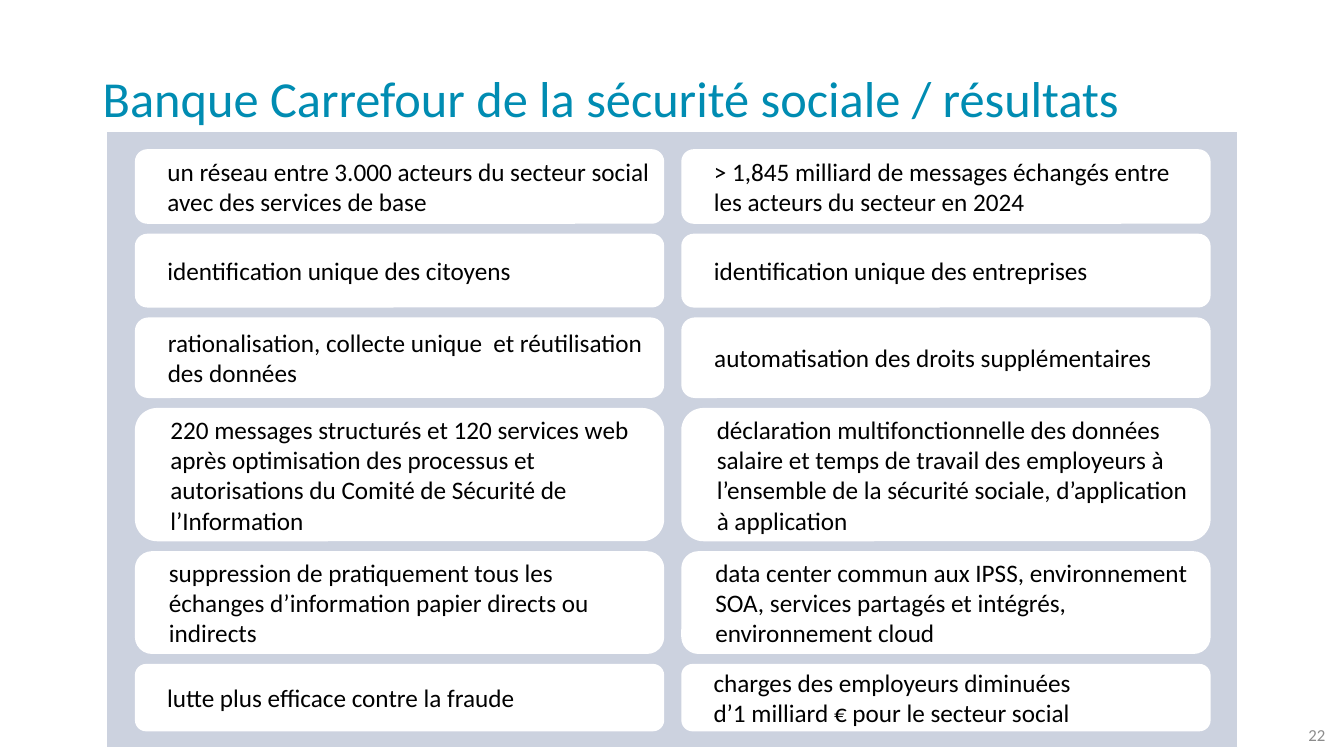
import pptx
import pptx.dml.color
import pptx.enum.shapes
import pptx.enum.text
import pptx.oxml
import pptx.oxml.ns
import pptx.util

Cm = pptx.util.Cm
Pt = pptx.util.Pt
ALIGN = pptx.enum.text.PP_ALIGN
SHAPE = pptx.enum.shapes.MSO_SHAPE
FONT = "Calibri"

# Row height in cm, then the paragraphs of the left and right cards
RESULTS = [
    (1.88, ["un réseau entre 3.000 acteurs du secteur social avec des services de base"],
     ["> 1,845 milliard de messages échangés entre les acteurs du secteur en 2024"]),
    (1.86, ["identification unique des citoyens"],
     ["identification unique des entreprises"]),
    (2.03, ["rationalisation, collecte unique  et réutilisation des données"],
     ["automatisation des droits supplémentaires"]),
    (3.36, ["220 messages structurés et 120 services web après optimisation des processus "
            "et autorisations du Comité de Sécurité de l’Information"],
     ["déclaration multifonctionnelle des données salaire et temps de travail des employeurs "
      "à l’ensemble de la sécurité sociale, d’application à application"]),
    (2.59, ["suppression de pratiquement tous les échanges d’information papier directs "
            "ou indirects"],
     ["data center commun aux IPSS, environnement SOA, services partagés et intégrés, "
      "environnement cloud"]),
    (1.7, ["lutte plus efficace contre la fraude"],
     ["charges des employeurs diminuées", "d’1 milliard € pour le secteur social"]),
]


def color(value):
    return pptx.dml.color.RGBColor.from_string(value)


def write(shape, lines, size, ink, align=ALIGN.LEFT, spacing=1.0, indent=None):
    frame = shape.text_frame
    frame.word_wrap = True
    frame.vertical_anchor = pptx.enum.text.MSO_ANCHOR.MIDDLE
    for index, line in enumerate(lines):
        para = frame.add_paragraph() if index else frame.paragraphs[0]
        para.alignment = align
        para.line_spacing = spacing
        if indent is not None:
            para.level = 1
            properties = para._p.get_or_add_pPr()
            properties.set("marL", str(indent))
            properties.set("indent", "0")
        span = para.add_run()
        span.text = line
        span.font.name = FONT
        span.font.size = Pt(size)
        span.font.color.rgb = color(ink)


def add_label(page, box, text, size, ink, **layout):
    write(page.shapes.add_textbox(*map(Cm, box)), [text], size, ink, **layout)


def add_block(page, kind, box, fill):
    shape = page.shapes.add_shape(kind, *map(Cm, box))
    shape.shadow.inherit = False
    shape.fill.solid()
    shape.fill.fore_color.rgb = color(fill)
    shape.line.fill.background()
    return shape


def add_panel(page, box):
    panel = add_block(page, SHAPE.RECTANGLE, box, "002060")
    panel.line.color.rgb = color("FFFFFF")
    panel.line.width = Pt(1)
    # Make the fill 20 % opaque
    tint = panel._element.spPr.find(pptx.oxml.ns.qn("a:solidFill"))[0]
    alpha = pptx.oxml.parse_xml(f'<a:alpha {pptx.oxml.ns.nsdecls("a")} val="20000"/>')
    tint.append(alpha)


def add_results(page, box):
    left, top, width, height = box
    add_panel(page, box)
    margin_x, margin_y, column_gap, row_gap = 0.73, 0.46, 0.43, 0.25
    card_width = 13.34
    y = top + margin_y
    for row_height, *cards in RESULTS:
        for column, lines in enumerate(cards):
            x = left + margin_x + column * (card_width + column_gap)
            card = add_block(page, SHAPE.ROUNDED_RECTANGLE,
                             (x, y, card_width, row_height), "FFFFFF")
            write(card, lines, 18, "000000", indent=Cm(0.48))
        y += row_height + row_gap


def main():
    deck = pptx.Presentation()
    deck.slide_width, deck.slide_height = Cm(33.87), Cm(19.05)
    page = deck.slides.add_slide(deck.slide_layouts[6])

    # Page number, results panel, title
    add_label(page, (31.57, 18.01, 2.08, 1.02), "22", 12, "8C8C8C", align=ALIGN.RIGHT)
    add_results(page, (2.67, 3.3, 28.52, 15.54))
    add_label(page, (2.34, 0.71, 29.21, 3.68),
              "Banque Carrefour de la sécurité sociale / résultats", 36, "008CB2", spacing=0.9)

    deck.save("out.pptx")


if __name__ == "__main__":
    main()
